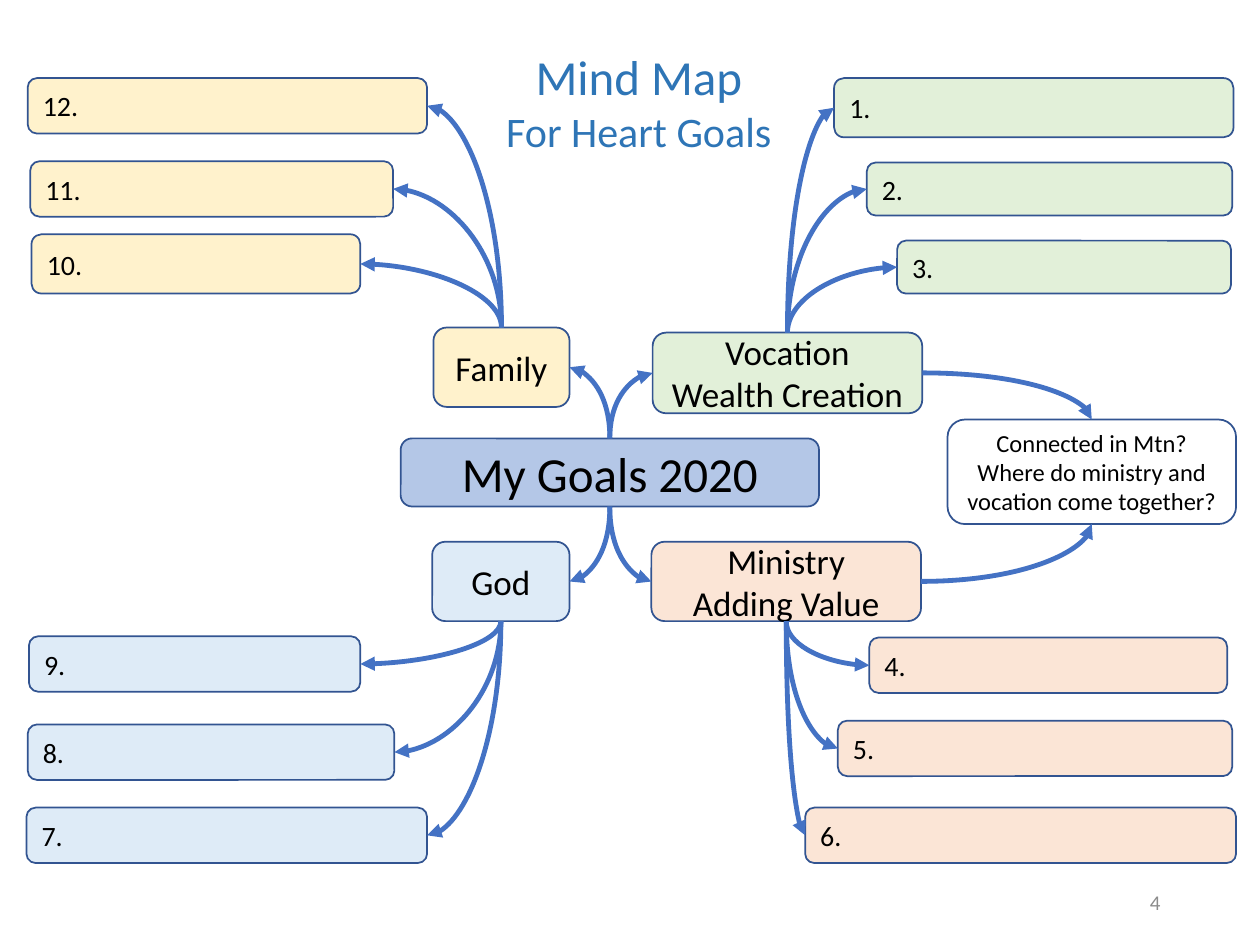
"""Build the goals mind map slide."""
from lxml import etree
from pptx import Presentation
from pptx import util as u
from pptx.dml.color import RGBColor
from pptx.enum import shapes, text
from pptx.oxml.ns import qn

TOP, LEFT, BOTTOM, RIGHT = range(4)
ALIGN = text.PP_ALIGN
YELLOW, GREEN, ORANGE, BLUE = "FFF2CC", "E2F0D9", "FBE5D6", "DEEBF7"

BRANCHES = {
    "Family": (["Family"], (3.44, 2.6, 1.08, 0.63), YELLOW, TOP, LEFT, [
        ("10.", (0.25, 1.86, 2.61, 0.47)),
        ("11.", (0.24, 1.28, 2.88, 0.44)),
        ("12.", (0.22, 0.62, 3.17, 0.44))]),
    "Vocation": (["Vocation", "Wealth Creation"], (5.18, 2.64, 2.14, 0.64), GREEN, TOP, RIGHT, [
        ("1.", (6.62, 0.62, 3.17, 0.47)),
        ("2.", (6.88, 1.29, 2.9, 0.42)),
        ("3.", (7.12, 1.91, 2.65, 0.42))]),
    "Ministry": (["Ministry", "Adding Value"], (5.17, 4.3, 2.14, 0.63), ORANGE, BOTTOM, RIGHT, [
        ("4.", (6.9, 5.06, 2.84, 0.44)),
        ("5.", (6.65, 5.72, 3.13, 0.44)),
        ("6.", (6.39, 6.41, 3.42, 0.44))]),
    "God": (["God"], (3.43, 4.3, 1.09, 0.63), BLUE, BOTTOM, LEFT, [
        ("7.", (0.21, 6.41, 3.18, 0.44)),
        ("8.", (0.22, 5.75, 2.91, 0.44)),
        ("9.", (0.23, 5.05, 2.63, 0.44))]),
}


def color(value):
    """Turn a hex string into a colour."""
    return RGBColor.from_string(value)


def write(frame, lines, sizes, fill="000000", align=ALIGN.CENTER,
          anchor=text.MSO_ANCHOR.MIDDLE, font="Calibri"):
    """Write one paragraph per line, each with its own size."""
    frame.word_wrap = True
    frame.auto_size = text.MSO_AUTO_SIZE.NONE
    frame.vertical_anchor = anchor
    for index, (line, size) in enumerate(zip(lines, sizes)):
        para = frame.paragraphs[0] if index == 0 else frame.add_paragraph()
        para.alignment = align
        para.line_spacing = 1.0
        para.space_before = u.Pt(0)
        span = para.add_run()
        span.text = line
        span.font.name = font
        span.font.size = u.Pt(size)
        span.font.color.rgb = color(fill)


class MindMap:
    """Hold the style and the current slide."""

    outline, arrow = "325491", "4472C4"

    def __init__(self, page):
        """Keep the slide to draw on."""
        self.page = page

    def title(self, lines, sizes, place):
        """Move and fill the title placeholder."""
        box = self.page.shapes.title
        box.left, box.top, box.width, box.height = map(u.Inches, place)
        write(box.text_frame, lines, sizes, fill="2E75B6", anchor=text.MSO_ANCHOR.TOP)

    def label(self, line, size, place, **style):
        """Add a plain text box."""
        box = self.page.shapes.add_textbox(*map(u.Inches, place))
        write(box.text_frame, [line], [size], **style)

    def box(self, lines, size, place, fill, **style):
        """Add a rounded box with text."""
        box = self.page.shapes.add_shape(
            shapes.MSO_SHAPE.ROUNDED_RECTANGLE, *map(u.Inches, place))
        box.shadow.inherit = False
        box.fill.solid()
        box.fill.fore_color.rgb = color(fill)
        box.line.color.rgb = color(self.outline)
        box.line.width = u.Pt(1)
        write(box.text_frame, lines, [size] * len(lines), **style)
        return box

    def curve(self, start, start_side, end, end_side):
        """Join two boxes with a quarter-turn arrow."""
        link = self.page.shapes.add_connector(shapes.MSO_CONNECTOR.CURVE, 0, 0, 0, 0)
        link.begin_connect(start, start_side)
        link.end_connect(end, end_side)
        link.line.color.rgb = color(self.arrow)
        link.line.width = u.Pt(2.75)
        across, down = link.end_x - link.begin_x, link.end_y - link.begin_y
        middle_x = (link.begin_x + link.end_x) // 2
        middle_y = (link.begin_y + link.end_y) // 2
        width, height = abs(across), abs(down)
        flip = down < 0
        if start_side in (TOP, BOTTOM):
            width, height = height, width
            link.rotation = 90 if down > 0 else 270
            flip = (across > 0) == (down > 0)
        link.left, link.top = middle_x - width // 2, middle_y - height // 2
        link.width, link.height = width, height

        properties = link.element.spPr
        frame = properties.find(qn("a:xfrm"))
        frame.set("flipH", "0")
        frame.set("flipV", str(int(flip)))
        properties.find(qn("a:prstGeom")).set("prst", "curvedConnector2")
        line = properties.find(qn("a:ln"))
        etree.SubElement(line, qn("a:tailEnd"), type="triangle")
        etree.SubElement(properties, qn("a:effectLst"))


def main():
    """Draw the mind map and save the deck."""
    deck = Presentation()
    deck.slide_width, deck.slide_height = u.Inches(10), u.Inches(7.5)
    mind = MindMap(deck.slides.add_slide(deck.slide_layouts[5]))
    mind.title(["Mind Map", "For Heart Goals"], [28, 24], (3.86, 0.32, 2.42, 0.98))

    center = mind.box(["My Goals 2020"], 28, (3.18, 3.48, 3.32, 0.54), "B4C7E7")
    topics = {}
    for name, (lines, place, fill, edge, side, goals) in BRANCHES.items():
        topic = topics[name] = mind.box(lines, 20, place, fill)
        inner = LEFT if side == RIGHT else RIGHT
        mind.curve(center, edge, topic, inner)
        for number, spot in goals:
            goal = mind.box([number], 16, spot, fill, align=ALIGN.LEFT)
            mind.curve(topic, edge, goal, inner)

    question = mind.box(
        ["Connected in Mtn?", "Where do ministry and vocation come together?"],
        14, (7.52, 3.33, 2.29, 0.83), "FFFFFF")
    mind.curve(topics["Vocation"], RIGHT, question, TOP)
    mind.curve(topics["Ministry"], RIGHT, question, BOTTOM)
    mind.label("4", 12, (6.97, 6.96, 2.34, 0.4), fill="8C8C8C", align=ALIGN.RIGHT)
    deck.save("out.pptx")


if __name__ == "__main__":
    main()
